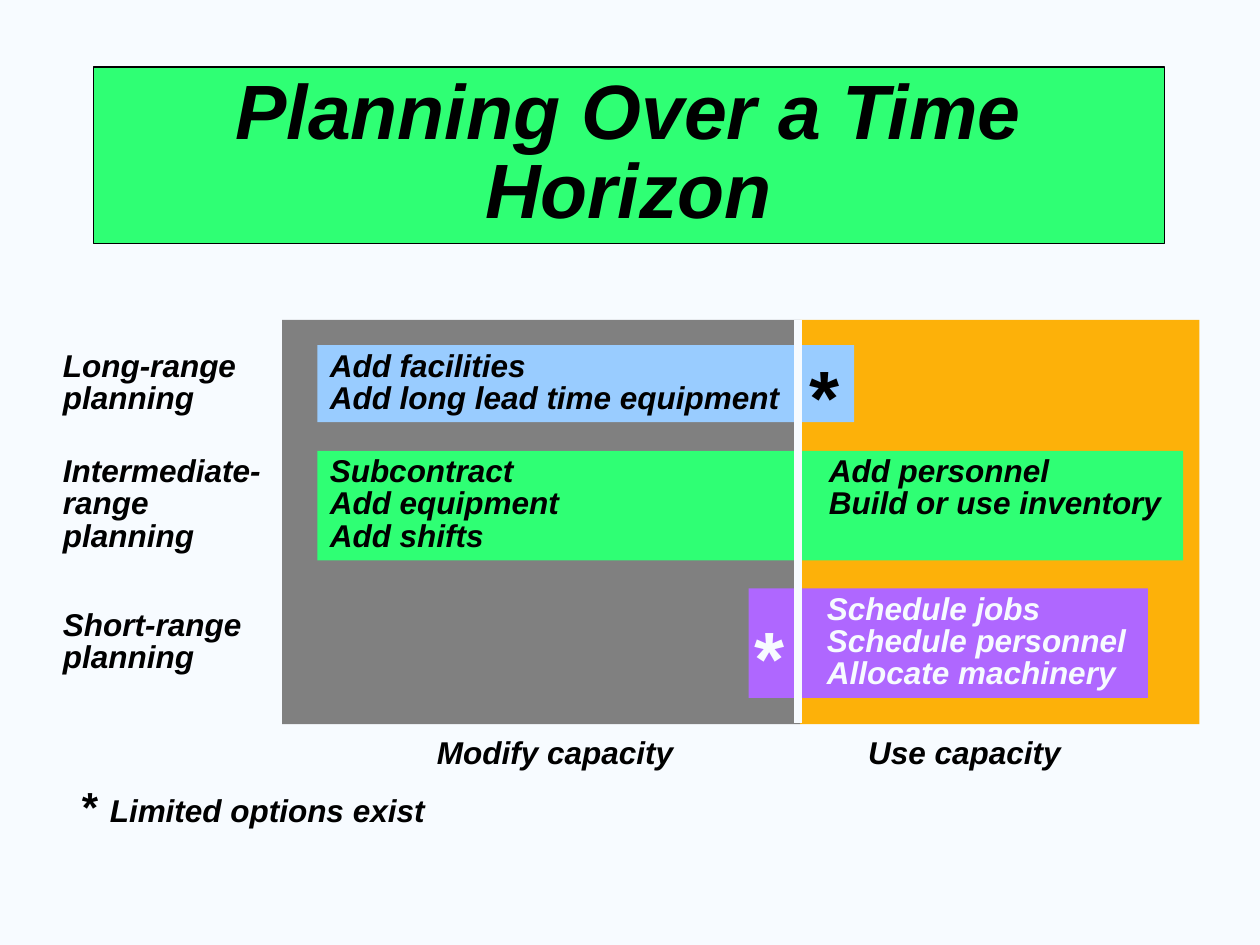
from pptx import Presentation
from pptx.dml.color import RGBColor
from pptx.enum.shapes import MSO_CONNECTOR as Conn, MSO_SHAPE as Shape
from pptx.enum.text import MSO_ANCHOR as Anchor, PP_ALIGN as Align
from pptx.oxml.ns import qn
from pptx.util import Cm, Pt
from lxml.etree import SubElement

BLACK = RGBColor(0x00, 0x00, 0x00)
PALE = RGBColor(0xF7, 0xFB, 0xFF)
GREY = RGBColor(0x80, 0x80, 0x80)
AMBER = RGBColor(0xFD, 0xB1, 0x09)
GREEN = RGBColor(0x2F, 0xFF, 0x74)
BLUE = RGBColor(0x99, 0xCC, 0xFF)
PURPLE = RGBColor(0xAF, 0x67, 0xFF)


class Deck:
    font = "Arial"
    size = 18
    lead = 0.85

    def __init__(self, wide, high):
        self.prs = Presentation()
        self.prs.slide_width = Cm(wide)
        self.prs.slide_height = Cm(high)
        self.slide = self.prs.slides.add_slide(self.prs.slide_layouts[6])
        back = self.slide.background.fill
        back.solid()
        back.fore_color.rgb = PALE

    def run(self, para, text, size=None, color=BLACK, slant=True):
        run = para.add_run()
        run.text = text
        font = run.font
        font.name = self.font
        font.size = Pt(size or self.size)
        font.bold = True
        font.italic = slant
        font.color.rgb = color

    def paras(self, frame, lines, size=None, color=BLACK, lead=lead, tab=None,
              align=Align.LEFT):
        for i, line in enumerate(lines):
            para = frame.add_paragraph() if i else frame.paragraphs[0]
            para.alignment = align
            para.line_spacing = lead
            if tab:
                stops = SubElement(para._p.get_or_add_pPr(), qn("a:tabLst"))
                SubElement(stops, qn("a:tab"), pos=str(Cm(tab)), algn="l")
            self.run(para, line, size, color)

    def box(self, x, y, w, h, fill, lines=(), edge=None, anchor=Anchor.TOP,
            **style):
        shape = self.slide.shapes.add_shape(
            Shape.RECTANGLE, Cm(x), Cm(y), Cm(w), Cm(h))
        shape.shadow.inherit = False
        shape.fill.solid()
        shape.fill.fore_color.rgb = fill
        if edge is None:
            shape.line.fill.background()
        else:
            shape.line.color.rgb = edge
            shape.line.width = Pt(0.75)
        frame = shape.text_frame
        frame.word_wrap = True
        frame.vertical_anchor = anchor
        self.paras(frame, lines, **style)

    def text(self, x, y, w, h, lines=(), wrap=False, **style):
        frame = self.slide.shapes.add_textbox(
            Cm(x), Cm(y), Cm(w), Cm(h)).text_frame
        frame.word_wrap = wrap
        self.paras(frame, lines, **style)
        return frame

    def star(self, x, y, color):
        self.text(x, y, 1.12, 2.11, ["*"], size=44, color=color, lead=1.0)

    def rule(self, x, top, end, color, width):
        line = self.slide.shapes.add_connector(
            Conn.STRAIGHT, Cm(x), Cm(top), Cm(x), Cm(end))
        line.line.color.rgb = color
        line.line.width = Pt(width)
        SubElement(line._element.spPr, qn("a:effectLst"))

    def save(self):
        self.prs.save("out.pptx")


def main():
    deck = Deck(25.4, 19.05)
    deck.box(1.88, 1.35, 21.59, 3.56, GREEN, ["Planning Over a Time Horizon"],
             edge=BLACK, anchor=Anchor.MIDDLE, size=44, align=Align.CENTER)

    top, high, split = 6.45, 8.15, 16.13
    deck.box(5.69, top, split - 5.69, high, GREY)
    deck.box(split, top, 8.05, high, AMBER)
    deck.text(8.56, 14.76, 5.28, 0.91, ["Modify capacity"])
    deck.text(17.25, 14.76, 4.39, 0.91, ["Use capacity"])

    for label, y, w, h in (
        ("Long-range planning", 6.96, 4.29, 1.55),
        ("Intermediate-range planning", 9.09, 4.5, 2.21),
        ("Short-range planning", 12.19, 4.29, 1.55),
    ):
        deck.text(1.02, y, w, h, [label], wrap=True)

    deck.box(6.4, 6.96, 10.82, 1.55, BLUE,
             ["Add facilities", "Add long lead time equipment"])
    deck.box(6.4, 9.09, 17.45, 2.21, GREEN,
             ["Subcontract\tAdd personnel",
              "Add equipment\tBuild or use inventory",
              "Add shifts"], tab=10.06)
    deck.box(15.09, 11.86, 8.05, 2.21, PURPLE,
             ["\tSchedule jobs", "\tSchedule personnel",
              "\tAllocate machinery"], color=PALE, tab=1.33)
    deck.star(16, 6.91, BLACK)
    deck.star(14.91, 12.17, PALE)

    note = deck.text(1.4, 15.6, 7.42, 1.27).paragraphs[0]
    deck.run(note, "* ", size=24, slant=False)
    deck.run(note, "Limited options exist")

    deck.rule(16.08, top, top + 8.13, PALE, 4.5)
    deck.save()


if __name__ == "__main__":
    main()
